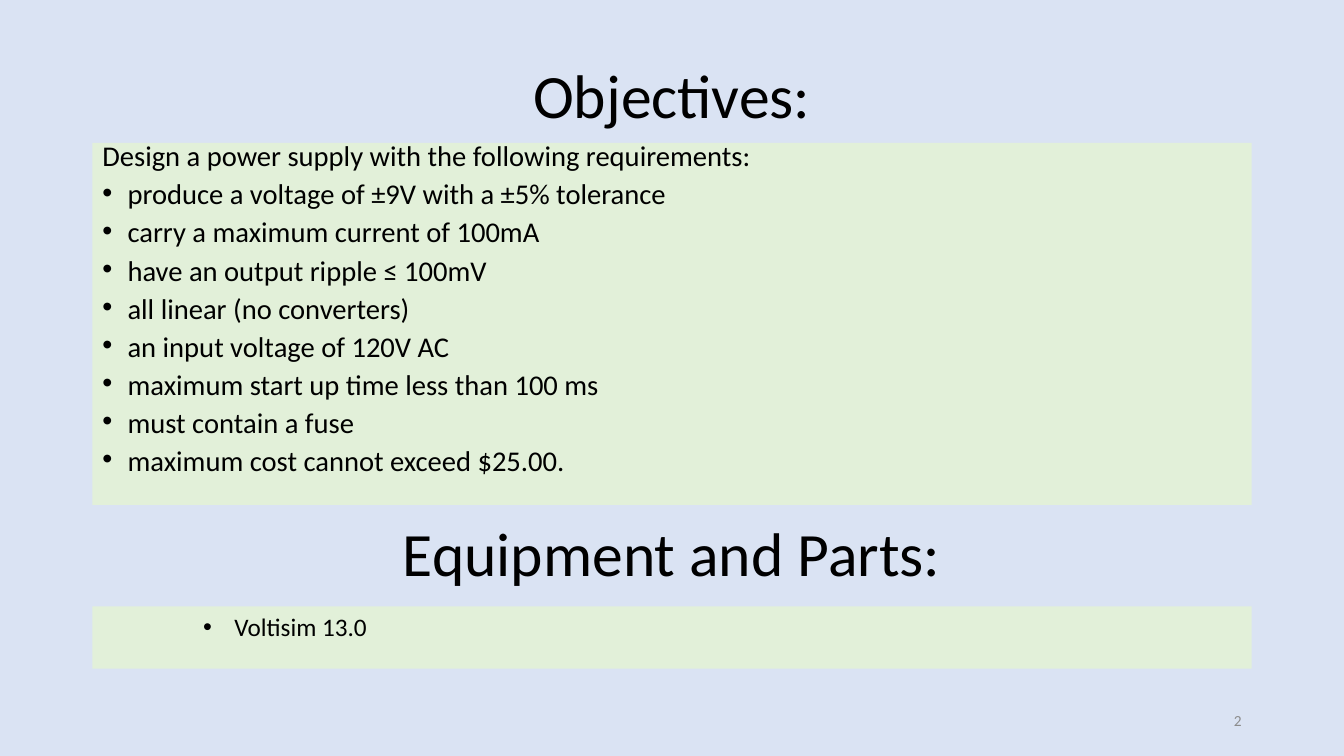
from lxml import etree
from pptx import Presentation
from pptx import util as u
from pptx.dml import color
from pptx.enum import shapes, text
from pptx.oxml import ns

COLORS = {"sky": "DAE3F3", "mint": "E2F0D9", "ink": "000000", "gray": "8C8C8C"}
HEADING = {"line_spacing": 0.9, "alignment": text.PP_ALIGN.CENTER}
REQUIREMENT = {"line_spacing": 0.7, "space_before": u.Pt(10)}
PART = {"level": 2}
NUMBER = {"alignment": text.PP_ALIGN.RIGHT}


class SlideBuilder:
    """Places styled elements on a grid of 160 columns by 90 rows."""

    def __init__(self, deck):
        self.font = "Calibri"
        self.column = deck.slide_width / 160
        self.row = deck.slide_height / 90
        self.slide = deck.slides.add_slide(deck.slide_layouts[6])
        backdrop = self.slide.background.fill
        backdrop.solid()
        backdrop.fore_color.rgb = self.rgb("sky")

    def rgb(self, name):
        return color.RGBColor.from_string(COLORS[name])

    def place(self, left, top, width, height):
        return [round(n) for n in (left * self.column, top * self.row,
                                   width * self.column, height * self.row)]

    def label(self, area, words, size, layout, ink="ink"):
        box = self.slide.shapes.add_textbox(*self.place(*area))
        self.frame(box, text.MSO_ANCHOR.MIDDLE)
        self.line(box.text_frame.paragraphs[0], words, size, layout, ink)

    def panel(self, area):
        box = self.slide.shapes.add_shape(shapes.MSO_SHAPE.RECTANGLE, *self.place(*area))
        box.shadow.inherit = False
        box.fill.solid()
        box.fill.fore_color.rgb = self.rgb("mint")
        box.line.fill.background()
        self.frame(box, text.MSO_ANCHOR.TOP)
        return box.text_frame

    def frame(self, box, anchor):
        box.text_frame.word_wrap = True
        box.text_frame.vertical_anchor = anchor

    def line(self, paragraph, words, size, layout, ink="ink"):
        for name, value in ({"alignment": text.PP_ALIGN.LEFT} | layout).items():
            setattr(paragraph, name, value)
        run = paragraph.add_run()
        run.text = words
        for name, value in {"name": self.font, "size": u.Pt(size)}.items():
            setattr(run.font, name, value)
        run.font.color.rgb = self.rgb(ink)

    def bullet(self, paragraph, words, size, layout, margin, hang):
        self.line(paragraph, words, size, layout)
        props = paragraph._p.get_or_add_pPr()
        props.set("marL", str(u.Inches(margin)))
        props.set("indent", str(-u.Inches(hang)))
        etree.SubElement(props, ns.qn("a:buFont"), typeface="Arial")
        etree.SubElement(props, ns.qn("a:buChar"), char="•")


def main():
    deck = Presentation()
    deck.slide_width, deck.slide_height = u.Inches(13.33), u.Inches(7.5)
    page = SlideBuilder(deck)

    page.label((11, 3, 138, 17.4), "Objectives:", 44, HEADING)
    objectives = page.panel((11, 17, 138, 43.1))
    page.line(objectives.paragraphs[0],
              "Design a power supply with the following requirements:", 20.4, REQUIREMENT)
    requirements = [
        "produce a voltage of ±9V with a ±5% tolerance",
        "carry a maximum current of 100mA",
        "have an output ripple ≤ 100mV",
        "all linear (no converters)",
        "an input voltage of 120V AC",
        "maximum start up time less than 100 ms",
        "must contain a fuse",
        "maximum cost cannot exceed $25.00.",
    ]
    for requirement in requirements:
        page.bullet(objectives.add_paragraph(), requirement, 20.4, REQUIREMENT, 0.25, 0.25)

    page.label((11, 57.5, 138, 17.4), "Equipment and Parts:", 44, HEADING)
    equipment = page.panel((11, 72.2, 138, 7.4))
    page.bullet(equipment.paragraphs[0], "Voltisim 13.0", 18, PART, 1.31, 0.31)
    page.label((113, 83.4, 36, 4.8), "2", 11, NUMBER, "gray")
    deck.save("out.pptx")


if __name__ == "__main__":
    main()
